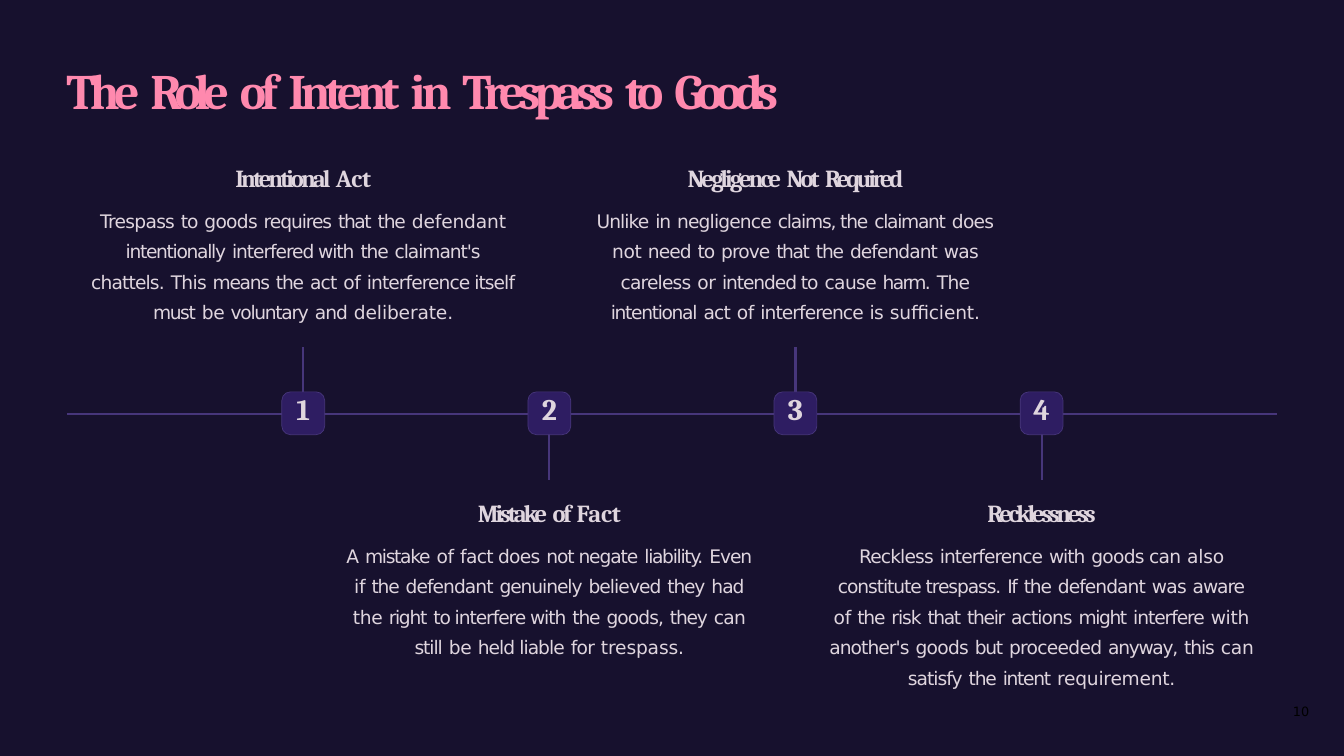
from pptx import Presentation
from pptx.dml.color import RGBColor
from pptx.enum.shapes import MSO_CONNECTOR, MSO_SHAPE
from pptx.enum.text import MSO_ANCHOR, MSO_AUTO_SIZE, PP_ALIGN
from pptx.oxml.ns import qn
from pptx.util import Inches, Pt
from lxml import etree

LEFT, CENTER = PP_ALIGN.LEFT, PP_ALIGN.CENTER
TOP, MIDDLE = MSO_ANCHOR.TOP, MSO_ANCHOR.MIDDLE
FIT = MSO_AUTO_SIZE.SHAPE_TO_FIT_TEXT
STRAIGHT, ROUNDED = MSO_CONNECTOR.STRAIGHT, MSO_SHAPE.ROUNDED_RECTANGLE
SERIF, SANS = "Cambria", "DejaVu Sans"
NIGHT, PINK, PALE = "17112E", "FF89AE", "DFD5DE"
BADGE_FILL, RULE, BLACK = "2E1D62", "47367B", "000000"

# Content: each span is (text, letter spacing in points)
TITLE = [("The ", -4.8), ("Role ", -5.5), ("of ", -4.5), ("Intent ", -4.7),
         ("in ", -3.6), ("Trespass ", -5.3), ("to ", -4.5), ("Goods", -6)]
PAGE_NUMBER = [("10", 0)]

# Each step: box width, box height, heading, body
STEPS = [
    (5.13, 1.94,
     [("Intentional ", -2.5), ("Act", -0.2)],
     [("Trespass ", -0.6), ("to ", -0.9), ("goods ", -0.6), ("requires ", -0.9),
      ("that ", -1.2), ("the ", -1), ("defendant ", -0.1),
      ("intentionally ", -1.1), ("interfered with ", -0.9), ("the ", -1),
      ("claimant's ", -0.9), ("chattels. ", -0.7), ("This ", -0.6),
      ("means ", -1.1), ("the ", -1), ("act ", -0.7), ("of ", -0.2),
      ("interference itself ", -0.8), ("must ", -1.2), ("be ", -0.2),
      ("voluntary ", -1.1), ("and ", -0.8), ("deliberate.", -0.1)]),
    (4.98, 1.94,
     [("Mistake ", -2.6), ("of ", -2.2), ("Fact", -0.2)],
     [("A ", 0), ("mistake ", -1.1), ("of ", -0.2), ("fact does ", -0.6),
      ("not negate ", -0.9), ("liability. ", -1.1), ("Even ", -0.9),
      ("if ", -0.2), ("the ", -1), ("defendant ", -0.8), ("genuinely ", -0.9),
      ("believed ", -0.8), ("they ", -1), ("had ", -0.8), ("the ", -0.2),
      ("right ", -1.1), ("to interfere with ", -0.9), ("the ", -1),
      ("goods, ", -0.8), ("they ", -1), ("can ", -0.6), ("still ", -0.9),
      ("be ", -0.2), ("held liable ", -0.8), ("for ", -0.6),
      ("trespass.", -0.1)]),
    (5.05, 1.94,
     [("Negligence ", -2.5), ("Not ", -2.4), ("Required", -2.8)],
     [("Unlike ", -0.8), ("in ", -0.9), ("negligence ", -0.7),
      ("claims, the ", -1), ("claimant ", -1.1), ("does ", -0.6),
      ("not ", -0.2), ("need ", -0.8), ("to ", -0.9), ("prove ", -0.8),
      ("that ", -1.2), ("the ", -1), ("defendant ", -0.8), ("was ", -0.6),
      ("careless ", -0.7), ("or ", -0.2), ("intended to ", -0.9),
      ("cause ", -0.5), ("harm. ", -1.4), ("The ", -0.5),
      ("intentional ", -1.1), ("act ", -0.7), ("of ", -0.2),
      ("interference ", -0.8), ("is ", -0.6), ("sufficient.", -0.1)]),
    (5.09, 2.3,
     [("Recklessness", -2.8)],
     [("Reckless ", -0.7), ("interference ", -0.8), ("with ", -0.9),
      ("goods can ", -0.6), ("also ", -0.2), ("constitute trespass. ", -0.9),
      ("If ", -1.4), ("the ", -1), ("defendant ", -0.8), ("was ", -0.6),
      ("aware ", -0.9), ("of ", -0.2), ("the ", -1), ("risk ", -0.9),
      ("that ", -1.2), ("their ", -1.1), ("actions ", -0.8), ("might ", -1.2),
      ("interfere ", -0.9), ("with ", -0.2), ("another's ", -0.8),
      ("goods ", -0.6), ("but ", -1.1), ("proceeded ", -0.6),
      ("anyway, ", -1.1), ("this ", -0.9), ("can ", -0.2), ("satisfy ", -0.8),
      ("the ", -1), ("intent ", -1.1), ("requirement.", -0.2)]),
]

# Timeline geometry in inches
AXIS_LEFT, AXIS_RIGHT, AXIS_Y = 0.8, 15.2, 4.92
FIRST_X, STEP_X = 3.61, 2.93
STEM, BADGE = 0.79, 0.51
TEXT_ABOVE, TEXT_BELOW = 1.93, 5.92


def color(value):
    return RGBColor.from_string(value)


def set_frame(frame, anchor=TOP, fit=FIT, top=0.01, bottom=0):
    frame.word_wrap = True
    frame.auto_size = fit
    frame.vertical_anchor = anchor
    frame.margin_left = frame.margin_right = 0
    frame.margin_top, frame.margin_bottom = Inches(top), Inches(bottom)


def write(para, spans, font, size, ink, bold=False, align=LEFT, before=0, leading=1.0):
    para.alignment = align
    para.space_before = Pt(before)
    para.line_spacing = leading
    for text, spacing in spans:
        # The space that ends a span keeps its normal width
        word = text.rstrip()
        for piece, tracking in ((word, spacing), (text[len(word):], 0)):
            if not piece:
                continue
            span = para.add_run()
            span.text = piece
            span.font.name, span.font.size, span.font.bold = font, Pt(size), bold
            span.font.color.rgb = color(ink)
            span._r.get_or_add_rPr().set("spc", str(round(tracking * 100)))


def add_rule(page, x1, y1, x2, y2):
    rule = page.shapes.add_connector(
        STRAIGHT, Inches(x1), Inches(y1), Inches(x2), Inches(y2))
    rule.line.color.rgb = color(RULE)
    rule.line.width = Pt(1.8)
    etree.SubElement(rule._element.spPr, qn("a:effectLst"))


def add_box(page, left, top, width, height):
    box = page.shapes.add_textbox(
        Inches(left), Inches(top), Inches(width), Inches(height))
    set_frame(box.text_frame)
    return box.text_frame


def add_badge(page, x, number):
    badge = page.shapes.add_shape(
        ROUNDED, Inches(x - BADGE / 2), Inches(AXIS_Y - BADGE / 2),
        Inches(BADGE), Inches(BADGE))
    badge.adjustments[0] = 0.2
    badge.shadow.inherit = False
    badge.fill.solid()
    badge.fill.fore_color.rgb = color(BADGE_FILL)
    badge.line.color.rgb = color(RULE)
    badge.line.width = Pt(0.6)
    set_frame(badge.text_frame, MIDDLE, MSO_AUTO_SIZE.NONE, 0, 0.11)
    write(badge.text_frame.paragraphs[0], [(str(number), 0)],
          SERIF, 25.5, PALE, True, CENTER)


def main():
    deck = Presentation()
    deck.slide_width, deck.slide_height = Inches(16), Inches(9)
    page = deck.slides.add_slide(deck.slide_layouts[5])
    page.background.fill.solid()
    page.background.fill.fore_color.rgb = color(NIGHT)

    # Title
    title = page.shapes.title
    title.left, title.top = Inches(0.79), Inches(0.7)
    title.width, title.height = Inches(9.42), Inches(0.74)
    set_frame(title.text_frame)
    write(title.text_frame.paragraphs[0], TITLE, SERIF, 42.5, PINK, True, before=0.9)

    # Timeline: odd steps stand above the axis, even steps hang below
    add_rule(page, AXIS_LEFT, AXIS_Y + 0.01, AXIS_RIGHT, AXIS_Y + 0.01)
    for index, (width, height, heading, body) in enumerate(STEPS):
        x = FIRST_X + index * STEP_X
        above = index % 2 == 0
        add_rule(page, x, AXIS_Y, x, AXIS_Y + (-STEM if above else STEM))
        add_badge(page, x, index + 1)
        frame = add_box(page, x - width / 2, TEXT_ABOVE if above else TEXT_BELOW,
                        width, height)
        write(frame.paragraphs[0], heading, SERIF, 21, PALE, True, CENTER, 1)
        write(frame.add_paragraph(), body, SANS, 16, PALE, False, CENTER, 8, 1.36)

    # Page number
    frame = add_box(page, 15.24, 8.37, 0.5, 0.2)
    write(frame.paragraphs[0], PAGE_NUMBER, SANS, 11, BLACK, align=CENTER)

    deck.save("out.pptx")


if __name__ == "__main__":
    main()
